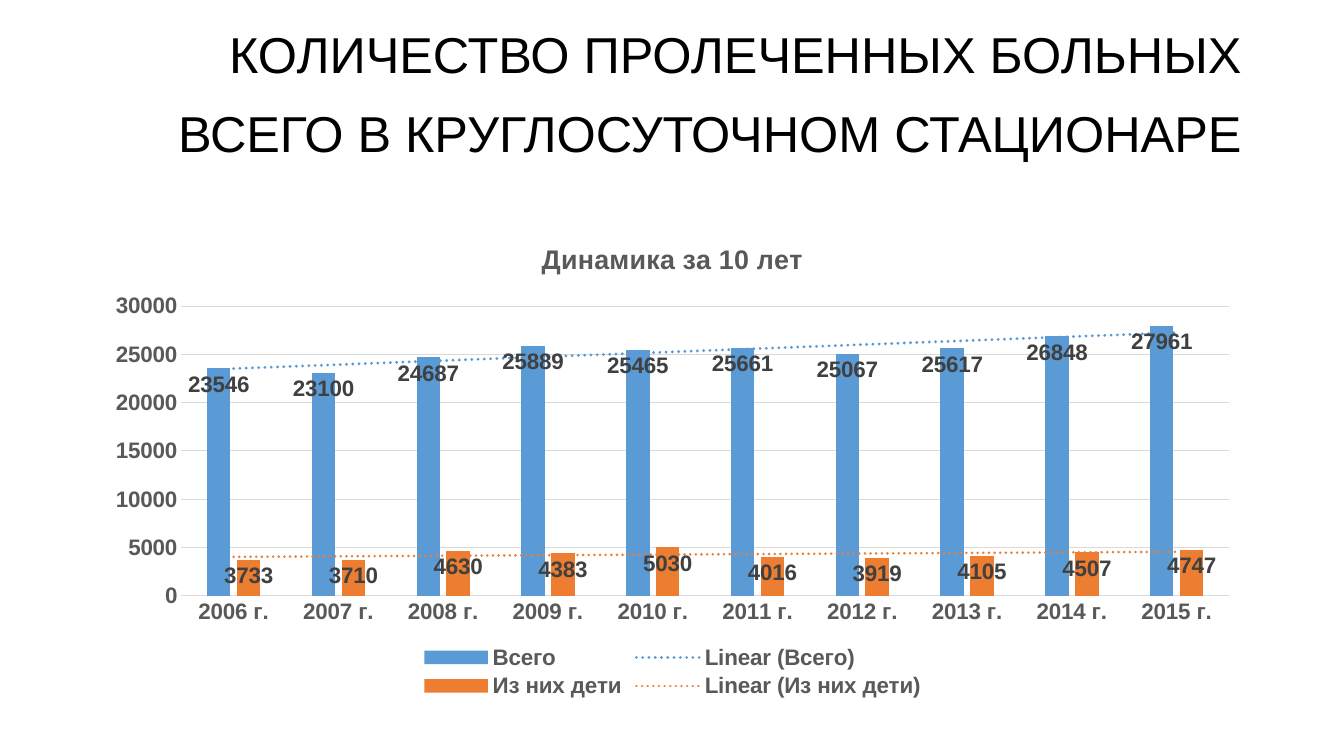
from lxml import etree
from pptx import Presentation
from pptx.chart.data import CategoryChartData
from pptx.dml.color import RGBColor
from pptx.enum.chart import (XL_CHART_TYPE, XL_LABEL_POSITION as LabelPos,
                             XL_LEGEND_POSITION as LegendPos, XL_TICK_MARK as Tick)
from pptx.enum.text import MSO_ANCHOR, PP_ALIGN
from pptx.oxml import parse_xml
from pptx.oxml.ns import nsdecls, qn
from pptx.util import Inches, Pt

FONT = "Arial"
COLORS = {"title": "000000", "text": "595959", "label": "404040", "grid": "D9D9D9",
          "total": "5B9BD5", "children": "ED7D31"}
YEARS = [f"{year} г." for year in range(2006, 2016)]
SERIES = [
    ("Всего", "total", 2.25,
     [23546, 23100, 24687, 25889, 25465, 25661, 25067, 25617, 26848, 27961]),
    ("Из них дети", "children", 2,
     [3733, 3710, 4630, 4383, 5030, 4016, 3919, 4105, 4507, 4747]),
]


def rgb(name):
    return RGBColor.from_string(COLORS[name])


def style_font(font, size, color, bold=True):
    font.name, font.size, font.bold = FONT, Pt(size), bold
    font.color.rgb = rgb(color)


def style_line(line, color, width=0.75):
    line.color.rgb = rgb(color)
    line.width = Pt(width)


def add_title(s, box):
    sp = s.shapes.title
    sp.left, sp.top, sp.width, sp.height = box
    tf = sp.text_frame
    tf.text = "КОЛИЧЕСТВО ПРОЛЕЧЕННЫХ БОЛЬНЫХ ВСЕГО В КРУГЛОСУТОЧНОМ СТАЦИОНАРЕ"
    tf.word_wrap = True
    tf.vertical_anchor = MSO_ANCHOR.MIDDLE
    p = tf.paragraphs[0]
    p.alignment = PP_ALIGN.RIGHT
    p.line_spacing = Pt(56.8)
    style_font(p.runs[0].font, 36, "title", bold=False)


def add_trend(series, color, width):
    """Add a dotted linear trend line, which the schema puts before the categories."""
    trend = parse_xml(
        f'<c:trendline {nsdecls("c", "a")}><c:spPr>'
        f'<a:ln w="{Pt(width)}" cap="rnd"><a:solidFill><a:srgbClr val="{COLORS[color]}"/>'
        '</a:solidFill><a:prstDash val="sysDot"/></a:ln></c:spPr>'
        '<c:trendlineType val="linear"/><c:dispRSqr val="0"/><c:dispEq val="0"/>'
        '</c:trendline>')
    series._element.find(qn("c:cat")).addprevious(trend)


def style_series(series, color, trend_width):
    series.format.fill.solid()
    series.format.fill.fore_color.rgb = rgb(color)
    series.invert_if_negative = False
    labels = series.data_labels
    labels.show_value = True
    labels.position = LabelPos.INSIDE_END
    style_font(labels.font, 16, "label")
    add_trend(series, color, trend_width)


def style_axes(chart):
    for axis in (chart.category_axis, chart.value_axis):
        axis.major_tick_mark = axis.minor_tick_mark = Tick.NONE
        style_font(axis.tick_labels.font, 16, "text")
    style_line(chart.category_axis.format.line, "grid")
    chart.value_axis.format.line.fill.background()
    chart.value_axis.has_major_gridlines = True
    style_line(chart.value_axis.major_gridlines.format.line, "grid")


def add_patients_chart(s, box):
    data = CategoryChartData()
    data.categories = YEARS
    for name, _, _, values in SERIES:
        data.add_series(name, values)
    chart = s.shapes.add_chart(XL_CHART_TYPE.COLUMN_CLUSTERED, *box, data).chart
    style_font(chart.font, 16, "title")

    chart.has_title = True
    tf = chart.chart_title.text_frame
    tf.text = "Динамика за 10 лет"
    style_font(tf.paragraphs[0].runs[0].font, 19.2, "text")

    chart.has_legend = True
    chart.legend.position = LegendPos.BOTTOM
    chart.legend.include_in_layout = False
    style_font(chart.legend.font, 16, "text")

    plot = chart.plots[0]
    plot.gap_width, plot.overlap = 219, -27
    plot.vary_by_categories = False
    for series, (_, color, trend_width, _) in zip(plot.series, SERIES):
        style_series(series, color, trend_width)
    style_axes(chart)


def main():
    prs = Presentation()
    prs.slide_width, prs.slide_height = Inches(13.33), Inches(7.5)
    s = prs.slides.add_slide(prs.slide_layouts[5])
    left, width = Inches(0.92), Inches(11.5)
    add_title(s, (left, 0, width, Inches(1.65)))
    add_patients_chart(s, (left, Inches(2.2), width, Inches(4.77)))
    prs.save("out.pptx")


if __name__ == "__main__":
    main()
